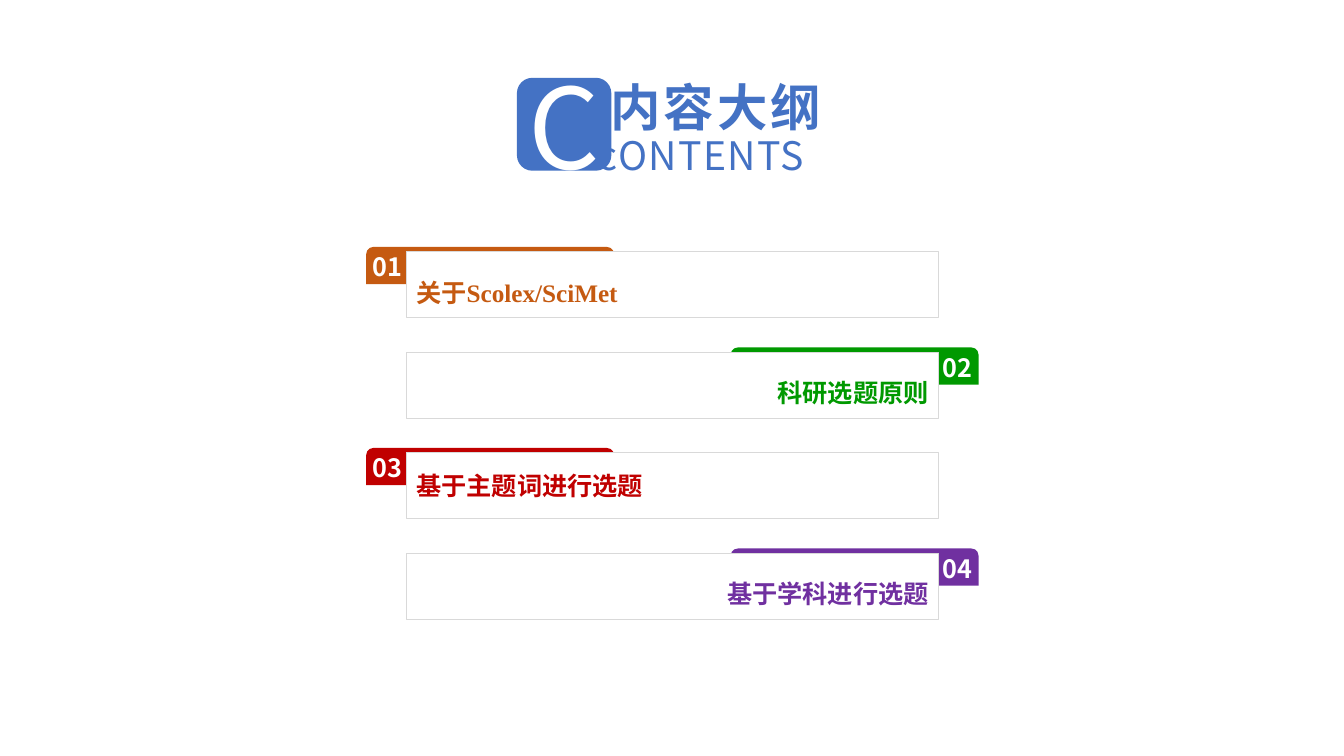
from dataclasses import dataclass

from pptx import Presentation
from pptx.dml.color import RGBColor
from pptx.enum.shapes import MSO_SHAPE as Preset
from pptx.enum.text import MSO_ANCHOR as Anchor, PP_ALIGN as Align
from pptx.oxml.ns import qn
from pptx.util import Pt


@dataclass(frozen=True)
class Theme:
    blue: str = "4472C4"
    orange: str = "C55A11"
    green: str = "009900"
    red: str = "C00000"
    purple: str = "7030A0"
    white: str = "FFFFFF"
    border: str = "D9D9D9"
    sans: str = "Noto Sans CJK SC"
    serif: str = "Times New Roman"
    body: int = 18
    subtitle: int = 28
    title: int = 36
    initial: int = 80


THEME = Theme()
ROW_TOP, ROW_PITCH = 176.4, 71.8
CARD_LEFT, CARD_WIDTH, CARD_HEIGHT, CARD_DROP = 290.2, 380.2, 47, 3.5
TAB_WIDTH, TAB_HEIGHT, TAB_OVERHANG = 177, 26.6, 28.6
TAB_INSET, FAR_INSET = 2.9, 7.2


def add_span(para, text, size, color, bold=False, font=THEME.sans, spacing=0):
    """Append a run with one font for Latin and East Asian text."""
    span = para.add_run()
    span.text = text
    span.font.size = Pt(size)
    span.font.bold = bold
    span.font.color.rgb = RGBColor.from_string(color)
    span.font.name = font
    properties = span.font._element
    east_asian = properties.makeelement(qn("a:ea"), {"typeface": font})
    properties.find(qn("a:latin")).addnext(east_asian)
    if spacing:
        properties.set("spc", str(spacing * 100))


def prepare_text(box, align, left=0, right=0, top=0, bottom=0):
    """Set anchor, wrapping and margins, and return the first paragraph."""
    frame = box.text_frame
    frame.word_wrap = True
    frame.vertical_anchor = Anchor.MIDDLE
    frame.margin_left, frame.margin_right = Pt(left), Pt(right)
    frame.margin_top, frame.margin_bottom = Pt(top), Pt(bottom)
    para = frame.paragraphs[0]
    para.alignment = align
    return para


def add_block(slide, preset, left, top, width, height, fill, line=None):
    block = slide.shapes.add_shape(preset, Pt(left), Pt(top), Pt(width), Pt(height))
    block.shadow.inherit = False
    block.fill.solid()
    block.fill.fore_color.rgb = RGBColor.from_string(fill)
    if line:
        block.line.color.rgb = RGBColor.from_string(line)
        block.line.width = Pt(0.75)
    else:
        block.line.fill.background()
    return block


def add_label(slide, text, left, top, width, height, size, bold, spacing):
    box = slide.shapes.add_textbox(Pt(left), Pt(top), Pt(width), Pt(height))
    para = prepare_text(box, Align.CENTER)
    add_span(para, text, size, THEME.blue, bold, spacing=spacing)


def add_entry(slide, index, color, spans, line_spacing):
    """Add a numbered tab and its card; tabs alternate between left and right."""
    top = ROW_TOP + index * ROW_PITCH
    if index % 2 == 0:
        align, tab_left = Align.LEFT, CARD_LEFT - TAB_OVERHANG
        insets = TAB_INSET, FAR_INSET
    else:
        align = Align.RIGHT
        tab_left = CARD_LEFT + CARD_WIDTH + TAB_OVERHANG - TAB_WIDTH
        insets = FAR_INSET, TAB_INSET

    tab = add_block(slide, Preset.ROUND_2_SAME_RECTANGLE, tab_left, top,
                    TAB_WIDTH, TAB_HEIGHT, color)
    tab.adjustments[0] = 0.19
    para = prepare_text(tab, align, *insets)
    add_span(para, f"{index + 1:02}", THEME.body, THEME.white, bold=True)

    card = add_block(slide, Preset.RECTANGLE, CARD_LEFT, top + CARD_DROP,
                     CARD_WIDTH, CARD_HEIGHT, THEME.white, THEME.border)
    para = prepare_text(card, align, 7.2, 7.2, 3.6, 3.6)
    para.line_spacing = line_spacing
    for text, font in spans:
        add_span(para, text, THEME.body, color, bold=True, font=font)


def add_heading(slide):
    add_label(slide, "cONTENTS", 413.3, 94.3, 174.2, 32.4, THEME.subtitle, False, 1)
    add_label(slide, "内容大纲", 425.5, 55.4, 171.4, 41.8, THEME.title, True, 2)
    badge = add_block(slide, Preset.ROUNDED_RECTANGLE, 369.2, 55.6, 67.5, 66.4, THEME.blue)
    add_span(prepare_text(badge, Align.CENTER), "C", THEME.initial, THEME.white)


def main():
    deck = Presentation()
    deck.slide_width, deck.slide_height = Pt(960), Pt(540)
    slide = deck.slides.add_slide(deck.slide_layouts[6])
    entries = [
        (THEME.orange, [("关于", THEME.sans), ("Scolex/SciMet", THEME.serif)], 1.5),
        (THEME.green, [("科研选题原则", THEME.sans)], 1.5),
        (THEME.red, [("基于主题词进行选题", THEME.sans)], 1.0),
        (THEME.purple, [("基于学科进行选题", THEME.sans)], 1.5),
    ]
    for index, entry in enumerate(entries):
        add_entry(slide, index, *entry)
    add_heading(slide)
    deck.save("out.pptx")


if __name__ == "__main__":
    main()
